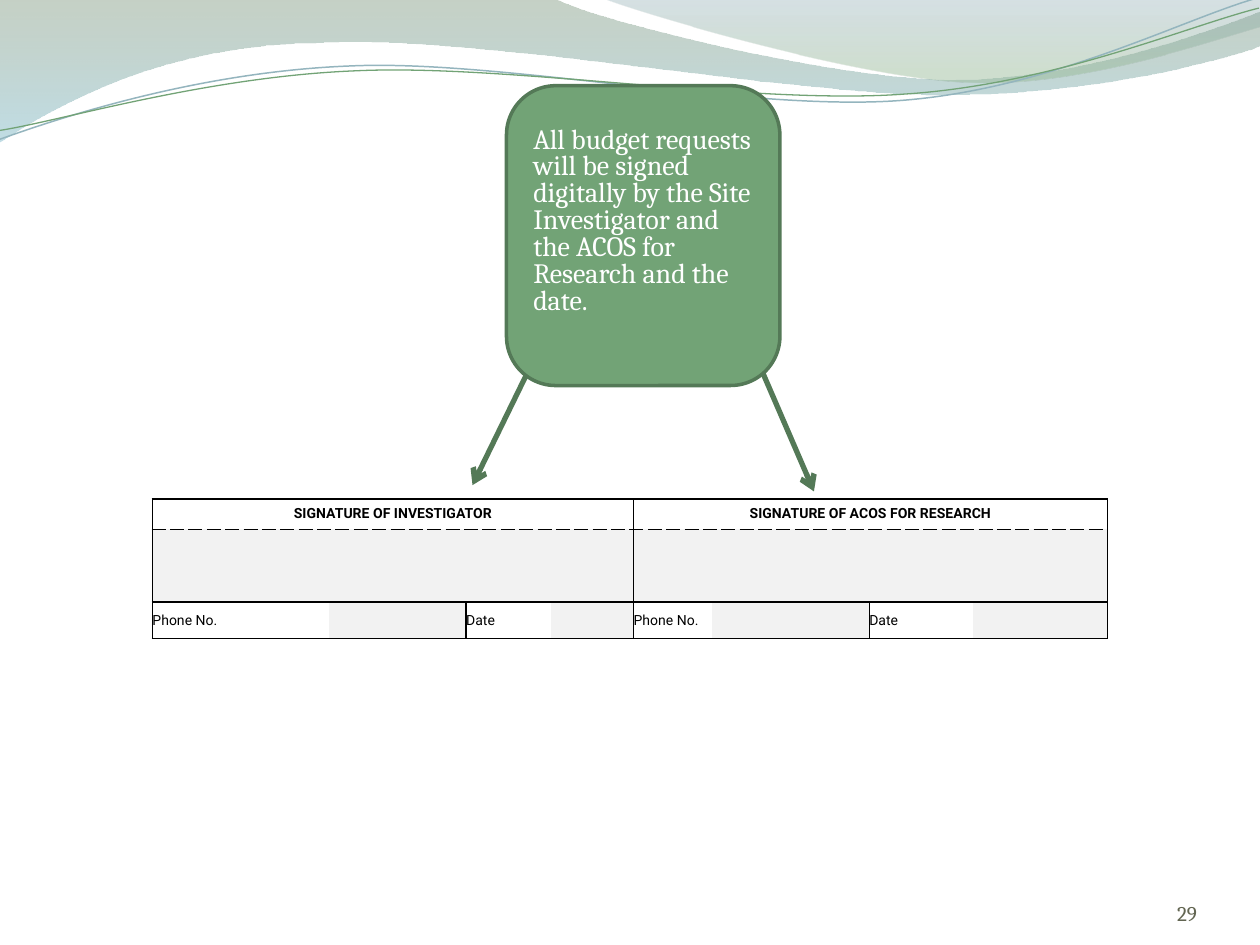
from typing import NamedTuple

from lxml.etree import SubElement
from pptx import Presentation
from pptx.dml.color import RGBColor
from pptx.enum.shapes import MSO_CONNECTOR, MSO_SHAPE
from pptx.enum.text import MSO_ANCHOR as Anchor, PP_ALIGN as Align
from pptx.oxml.ns import qn
from pptx.util import Emu, Pt

PX = 9144  # 100 px to the inch

WHITE = RGBColor(0xFF, 0xFF, 0xFF)
BLACK = RGBColor(0, 0, 0)
GREEN = RGBColor(0x72, 0xA3, 0x76)
DARK_GREEN = RGBColor(0x54, 0x79, 0x57)
PALE_BLUE = RGBColor(0x94, 0xB5, 0xBE)
SAGE = RGBColor(0x80, 0x99, 0x80)
SKY = RGBColor(0x8D, 0xC1, 0xCF)
SLATE = RGBColor(0x77, 0x9B, 0xA4)
LEAF = RGBColor(0x96, 0xB9, 0x96)
FIELD_GRAY = RGBColor(0xF2, 0xF2, 0xF2)
NUMBER_GRAY = RGBColor(0x62, 0x65, 0x51)

NO_STYLE_TABLE = "{2D5ABB26-0587-4C30-8999-92F81FD0307C}"
COLUMNS = [140, 109, 67, 66, 62, 125, 82, 107]
ROWS = [24, 58, 29]
HEADINGS = ["SIGNATURE OF INVESTIGATOR", "SIGNATURE OF ACOS FOR RESEARCH"]
LABELS = ["Phone No.", "Date"]


class Stop(NamedTuple):
    position: float
    color: RGBColor
    opacity: int


class Wave(NamedTuple):
    """A run of segments: two numbers draw a line, six draw a Bezier curve."""
    start: tuple[int, int]
    segments: list[tuple[int, ...]]
    stops: tuple[Stop, ...] = ()
    color: RGBColor | None = None
    width: float = 0
    rotation: float = 0


class Arrow(NamedTuple):
    start: tuple[int, int]
    end: tuple[int, int]


WAVES = [
    Wave((0, -1), [(440, -1), (476, 17, 664, 63, 758, 63), (853, 63, 958, 26, 1000, 9),
                   (1001, 36), (983, 44, 870, 76, 746, 75), (622, 75, 382, 28, 257, 34),
                   (129, 35, 46, 83, -1, 113), (0, -1)],
         stops=(Stop(0, SAGE, 45), Stop(1, SKY, 55))),
    Wave((479, -1), [(509, 11, 682, 62, 769, 65), (856, 69, 961, 32, 1000, 21),
                     (1000, 0), (479, -1)],
         stops=(Stop(0, SLATE, 30), Stop(0.8, LEAF, 45))),
    Wave((-2, 87), [(47, 72, 158, 41, 278, 42), (396, 42, 591, 93, 712, 90),
                    (832, 87, 940, 36, 1000, 22)],
         color=PALE_BLUE, width=0.85, rotation=-2.7),
    Wave((-2, 80), [(46, 75, 164, 45, 283, 46), (403, 46, 596, 88, 716, 85),
                    (835, 83, 942, 42, 1001, 30)],
         color=GREEN, width=0.75, rotation=-2.7),
]
ARROWS = [Arrow((419, 295), (375, 385)), Arrow((605, 295), (646, 390))]


def px(*lengths: int) -> list[Emu]:
    return [Emu(length * PX) for length in lengths]


def write(frame, text: str, *, size: float, font: str, color: RGBColor, bold=False,
          align=Align.LEFT, anchor=Anchor.MIDDLE, spacing=None) -> None:
    frame.word_wrap = True
    frame.vertical_anchor = anchor
    para = frame.paragraphs[0]
    para.alignment, para.line_spacing = align, spacing
    span = para.add_run()
    span.text = text
    span.font.name, span.font.size, span.font.bold = font, Pt(size), bold
    span.font.color.rgb = color


def bend(shape, segments: list[tuple[int, ...]]) -> None:
    """Turn each three line points of a six-number segment into one Bezier curve."""
    lines = iter(list(shape.element.spPr.iter(qn("a:lnTo"))))
    for segment in segments:
        group = [next(lines) for _ in range(len(segment) // 2)]
        if len(group) == 3:
            group[0].tag = qn("a:cubicBezTo")
            for line in group[1:]:
                group[0].append(line[0])
                line.getparent().remove(line)


def draw_wave(slide, wave: Wave) -> None:
    builder = slide.shapes.build_freeform(*px(*wave.start))
    points = [px(*segment[i:i + 2]) for segment in wave.segments
              for i in range(0, len(segment), 2)]
    builder.add_line_segments(points, close=bool(wave.stops))
    shape = builder.convert_to_shape()
    bend(shape, wave.segments)
    shape.rotation = wave.rotation
    shape.shadow.inherit = False
    if not wave.stops:
        shape.fill.background()
        shape.line.color.rgb = wave.color
        shape.line.width = Pt(wave.width)
        return
    shape.line.fill.background()
    shape.fill.gradient()
    shape.fill.gradient_angle = 270
    for target, stop in zip(shape.fill.gradient_stops, wave.stops):
        target.position, target.color.rgb = stop.position, stop.color
    for color, stop in zip(shape.element.spPr.iter(qn("a:srgbClr")), wave.stops):
        SubElement(color, qn("a:alpha"), val=str(stop.opacity * 1000))


def draw_arrow(slide, arrow: Arrow) -> None:
    line = slide.shapes.add_connector(MSO_CONNECTOR.STRAIGHT, *px(*arrow.start, *arrow.end))
    line.line.color.rgb = DARK_GREEN
    line.line.width = Pt(3)
    SubElement(line.line._get_or_add_ln(), qn("a:tailEnd"), type="arrow")
    SubElement(line.element.spPr, qn("a:effectLst"))


def draw_note(slide, text: str) -> None:
    box = slide.shapes.add_shape(MSO_SHAPE.ROUNDED_RECTANGLE, *px(402, 68, 217, 238))
    box.adjustments[0] = 0.18
    box.shadow.inherit = False
    box.fill.solid()
    box.fill.fore_color.rgb = GREEN
    box.line.color.rgb = DARK_GREEN
    box.line.width = Pt(2)
    box.text_frame.margin_bottom, = px(27)
    write(box.text_frame, text, size=16, font="Cambria", color=WHITE, spacing=0.8)


def add_border(cell, side: str, dashed: bool = False, visible: bool = True) -> None:
    line = SubElement(cell._tc.get_or_add_tcPr(), qn(f"a:ln{side}"),
                      w=str(Pt(0.5 if dashed else 1)))
    if not visible:
        SubElement(line, qn("a:noFill"))
        return
    SubElement(SubElement(line, qn("a:solidFill")), qn("a:srgbClr"), val=str(BLACK))
    SubElement(line, qn("a:prstDash"), val="dash" if dashed else "solid")


def format_cell(cell, row: int, column: int) -> None:
    cell.margin_left = cell.margin_right = cell.margin_top = cell.margin_bottom = 0
    cell.vertical_anchor = Anchor.MIDDLE
    cell.text_frame.paragraphs[0]._p.get_or_add_endParaRPr().set("sz", "800")
    is_field = column % 2 == 1
    add_border(cell, "L", visible=row < 2 or not is_field)
    add_border(cell, "R", visible=row < 2 or is_field)
    add_border(cell, "T", dashed=row == 1)
    add_border(cell, "B", dashed=row == 0)
    if row == 1 or (row == 2 and is_field):
        cell.fill.solid()
        cell.fill.fore_color.rgb = FIELD_GRAY
    else:
        cell.fill.background()


def draw_signature_table(slide) -> None:
    frame = slide.shapes.add_table(len(ROWS), len(COLUMNS),
                                   *px(121, 396, sum(COLUMNS), sum(ROWS)))
    table = frame.table
    table.first_row = table.horz_banding = False
    table._tbl.tblPr.find(qn("a:tableStyleId")).text = NO_STYLE_TABLE
    for column, width in zip(table.columns, px(*COLUMNS)):
        column.width = width
    for row, height in zip(table.rows, px(*ROWS)):
        row.height = height
    for row in range(len(ROWS)):
        for column in range(len(COLUMNS)):
            format_cell(table.cell(row, column), row, column)
    for index, heading in enumerate(HEADINGS):
        first = index * 4
        for row in (0, 1):
            table.cell(row, first).merge(table.cell(row, first + 3))
        write(table.cell(0, first).text_frame, heading, size=8, font="Roboto",
              color=BLACK, bold=True, align=Align.CENTER)
    for index, label in enumerate(LABELS * 2):
        write(table.cell(2, index * 2).text_frame, label, size=8, font="Roboto", color=BLACK)


def draw_page_number(slide, number: str) -> None:
    frame = slide.shapes.add_textbox(*px(867, 695, 83, 40)).text_frame
    frame.margin_left = frame.margin_right = frame.margin_top = frame.margin_bottom = 0
    write(frame, number, size=12, font="Cambria", color=NUMBER_GRAY,
          align=Align.RIGHT, anchor=Anchor.BOTTOM)


def main() -> None:
    deck = Presentation()
    deck.slide_width, deck.slide_height = px(1000, 750)
    slide = deck.slides.add_slide(deck.slide_layouts[6])
    for wave in WAVES:
        draw_wave(slide, wave)
    draw_page_number(slide, "29")
    for arrow in ARROWS:
        draw_arrow(slide, arrow)
    draw_note(slide, "All budget requests will be signed digitally by the Site Investigator "
                     "and the ACOS for Research and the date.")
    draw_signature_table(slide)
    deck.save("out.pptx")


if __name__ == "__main__":
    main()
